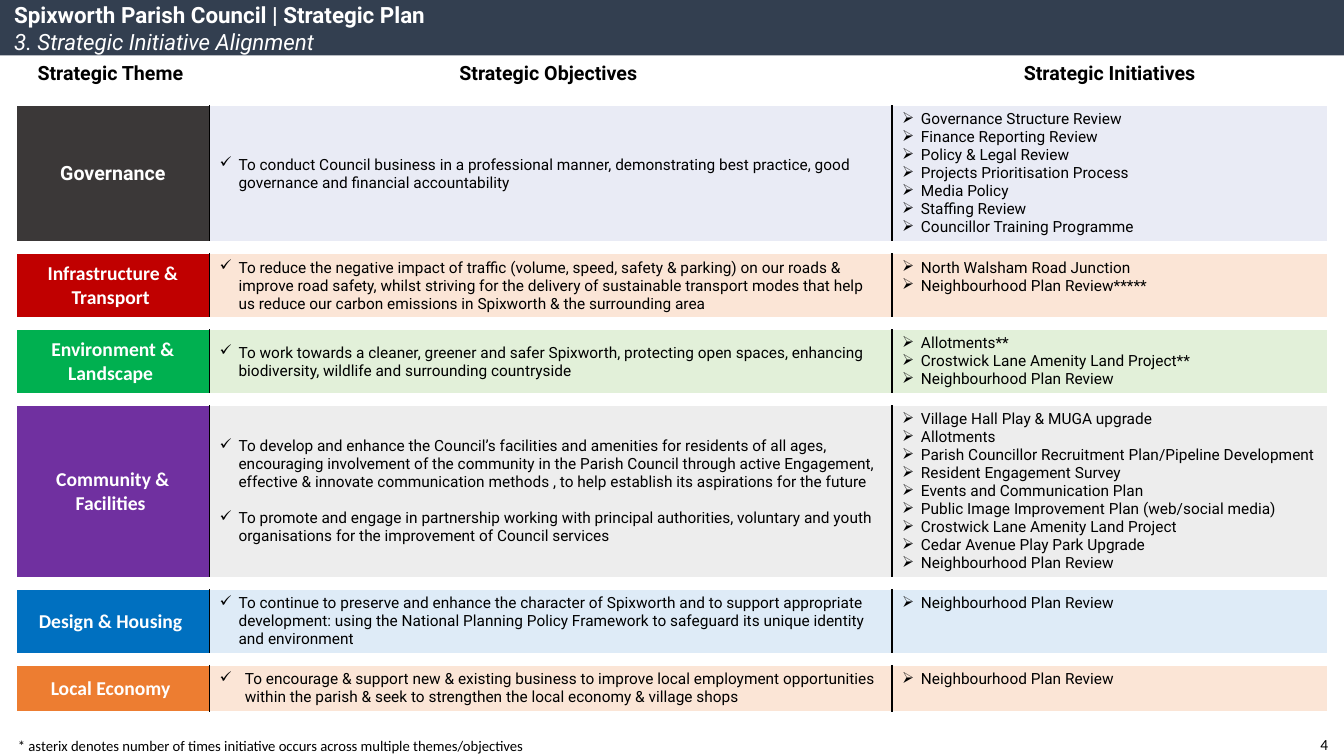
"""Build the strategic initiative alignment slide."""
from dataclasses import dataclass

from lxml import etree
from pptx import Presentation
from pptx.dml.color import RGBColor
from pptx.enum.shapes import MSO_SHAPE
from pptx.enum.text import MSO_ANCHOR, MSO_AUTO_SIZE, PP_ALIGN
from pptx.oxml.ns import qn
from pptx.util import Pt

RECT = MSO_SHAPE.RECTANGLE
TOP, MIDDLE = MSO_ANCHOR.TOP, MSO_ANCHOR.MIDDLE
LEFT, CENTER = PP_ALIGN.LEFT, PP_ALIGN.CENTER
FIT, FIXED = MSO_AUTO_SIZE.SHAPE_TO_FIT_TEXT, MSO_AUTO_SIZE.NONE

WHITE = RGBColor(0xFF, 0xFF, 0xFF)
BLACK = RGBColor(0x00, 0x00, 0x00)
NAVY = RGBColor(0x33, 0x3F, 0x50)
COAL = RGBColor(0x3B, 0x38, 0x38)
RED = RGBColor(0xC0, 0x00, 0x00)
GREEN = RGBColor(0x00, 0xB0, 0x50)
PURPLE = RGBColor(0x70, 0x30, 0xA0)
BLUE = RGBColor(0x00, 0x70, 0xC0)
ORANGE = RGBColor(0xED, 0x7D, 0x31)
MIST = RGBColor(0xE9, 0xEB, 0xF5)
PEACH = RGBColor(0xFB, 0xE5, 0xD6)
MINT = RGBColor(0xE2, 0xF0, 0xD9)
PALE = RGBColor(0xED, 0xED, 0xED)
SKY = RGBColor(0xDE, 0xEB, 0xF7)

HEAD = {"name": "Roboto", "size": Pt(14), "bold": True}
THEME = {"name": "Calibri", "size": Pt(14), "bold": True}
ITEM = {"name": "Roboto", "size": Pt(11), "bold": False}
MAIN = {"name": "Roboto", "size": Pt(16), "bold": True, "italic": False}
SUB = {"name": "Roboto", "size": Pt(16), "bold": False, "italic": True}
NOTE = {"name": "Calibri", "size": Pt(10.5)}
PAGE = {"name": "Calibri", "size": Pt(11)}

HEADS = ("Strategic Theme ", "Strategic Objectives ", "Strategic Initiatives")
COLS = (138.24, 487.44, 311.04)
HEAD_H, GAP_H = 26, 8.5
REVIEW = "Neighbourhood Plan Review"


@dataclass(frozen=True)
class Band:
    """One theme with its goals, tasks and colours."""
    theme: str
    dark: RGBColor
    light: RGBColor
    height: float
    goals: tuple[str, ...]
    tasks: tuple[str, ...]
    form: dict
    indent: float = 13.5


BANDS = (
    Band("Governance", COAL, MIST, 97.3,
         ("To conduct Council business in a professional manner, demonstrating best practice, "
          "good governance and financial accountability",),
         ("Governance Structure Review", "Finance Reporting Review", "Policy & Legal Review",
          "Projects Prioritisation Process", "Media Policy", "Staffing Review",
          "Councillor Training Programme"), HEAD),
    Band("Infrastructure & Transport ", RED, PEACH, 45.8,
         ("To reduce the negative impact of traffic (volume, speed, safety & parking) on our "
          "roads & improve road safety, whilst striving for the delivery of sustainable "
          "transport modes that help us reduce our carbon emissions in Spixworth & the "
          "surrounding area",),
         ("North Walsham Road Junction", REVIEW + "*****"), THEME),
    Band("Environment & Landscape ", GREEN, MINT, 45.8,
         ("To work towards a cleaner, greener and safer Spixworth, protecting open spaces, "
          "enhancing biodiversity, wildlife and surrounding countryside",),
         ("Allotments**", "Crostwick Lane Amenity Land Project**", REVIEW), THEME),
    Band("Community & Facilities ", PURPLE, PALE, 122.8,
         ("To develop and enhance the Council’s facilities and amenities for residents of all "
          "ages, encouraging involvement of the community in the Parish Council through active "
          "Engagement, effective & innovate communication methods , to help establish its "
          "aspirations for the future",
          "To promote and engage in partnership working with principal authorities, voluntary "
          "and youth organisations for the improvement of Council services"),
         ("Village Hall Play & MUGA upgrade", "Allotments",
          "Parish Councillor Recruitment Plan/Pipeline Development",
          "Resident Engagement Survey", "Events and Communication Plan",
          "Public Image Improvement Plan (web/social media)",
          "Crostwick Lane Amenity Land Project", "Cedar Avenue Play Park Upgrade",
          REVIEW), THEME),
    Band("Design & Housing ", BLUE, SKY, 45.8,
         ("To continue to preserve and enhance the character of Spixworth and to support "
          "appropriate development: using the National Planning Policy Framework to safeguard "
          "its unique identity and environment",),
         (REVIEW,), THEME),
    Band("Local Economy ", ORANGE, PEACH, 33,
         ("To encourage & support new & existing business to improve local employment "
          "opportunities within the parish & seek to strengthen the local economy & "
          "village shops",),
         (REVIEW,), THEME, 18),
)


def write(para, text: str, form: dict, color: RGBColor, align=LEFT) -> None:
    """Put one styled run into a paragraph."""
    para.alignment = align
    run = para.add_run()
    run.text = text
    for key, value in form.items():
        setattr(run.font, key, value)
    run.font.color.rgb = color


def paint(cell, fill: RGBColor, left=WHITE, right=WHITE, base=1) -> None:
    """Give a cell its borders and fill."""
    props = cell._tc.get_or_add_tcPr()
    edges = (("L", left, 1), ("R", right, 1), ("T", WHITE, 1), ("B", WHITE, base))
    for side, color, width in edges:
        line = etree.SubElement(props, qn(f"a:ln{side}"), w=str(Pt(width)))
        solid = etree.SubElement(line, qn("a:solidFill"))
        etree.SubElement(solid, qn("a:srgbClr"), val=str(color))
    cell.fill.solid()
    cell.fill.fore_color.rgb = fill


def fill_list(cell, items: tuple[str, ...], mark: str, indent: float, gap: float) -> None:
    """Write a bulleted list into a cell."""
    frame = cell.text_frame
    for index, text in enumerate(items):
        para = frame.add_paragraph() if index else frame.paragraphs[0]
        props = para._p.get_or_add_pPr()
        props.set("marL", str(Pt(indent)))
        props.set("indent", str(-Pt(indent)))
        etree.SubElement(props, qn("a:buChar"), char=mark)
        if index and gap:
            para.space_before = Pt(gap)
        write(para, text, ITEM, BLACK)


def draw_gap(row) -> None:
    """Make a row a thin white gap."""
    row.height = Pt(GAP_H)
    for cell in row.cells:
        paint(cell, WHITE)
        cell.margin_top = cell.margin_bottom = Pt(0)
        para = cell.text_frame.paragraphs[0]
        etree.SubElement(para._p, qn("a:endParaRPr"), sz="100")


def draw_band(row, band: Band) -> None:
    """Fill a row with one theme."""
    row.height = Pt(band.height)
    theme, goals, tasks = row.cells
    paint(theme, band.dark, right=BLACK)
    paint(goals, band.light, BLACK, BLACK)
    paint(tasks, band.light, left=BLACK)
    theme.vertical_anchor = goals.vertical_anchor = MIDDLE
    write(theme.text_frame.paragraphs[0], band.theme, band.form, WHITE, CENTER)
    fill_list(goals, band.goals, "✓", band.indent, 12.9)
    fill_list(tasks, band.tasks, "➢", 13.5, 0)


def draw_grid(slide):
    """Add the table of themes and return its frame."""
    high = HEAD_H + sum(GAP_H + band.height for band in BANDS)
    grid = slide.shapes.add_table(1 + 2 * len(BANDS), len(COLS), Pt(11.52), Pt(41),
                                  Pt(sum(COLS)), Pt(high))
    table = grid.table
    table.first_row = table.horz_banding = False
    for col, width in zip(table.columns, COLS):
        col.width = Pt(width)
    table.rows[0].height = Pt(HEAD_H)
    for cell, text in zip(table.rows[0].cells, HEADS):
        paint(cell, WHITE, base=3)
        write(cell.text_frame.paragraphs[0], text, HEAD, BLACK, CENTER)
    for index, band in enumerate(BANDS):
        draw_gap(table.rows[2 * index + 1])
        draw_band(table.rows[2 * index + 2], band)
    return grid


def draw_note(slide, text: str, form: dict, box: tuple[float, ...]) -> None:
    """Add one line of small text at the foot."""
    frame = slide.shapes.add_textbox(*map(Pt, box)).text_frame
    frame.word_wrap, frame.auto_size = False, FIT
    write(frame.paragraphs[0], text, form, BLACK)


def main() -> None:
    """Build and save the slide."""
    deck = Presentation()
    deck.slide_width, deck.slide_height = Pt(960), Pt(540)
    slide = deck.slides.add_slide(deck.slide_layouts[5])
    title = slide.shapes.title
    title.left, title.top, title.width, title.height = map(Pt, (2.88, -2.88, 960, 46))
    frame = title.text_frame
    frame.vertical_anchor, frame.auto_size = TOP, FIXED
    write(frame.paragraphs[0], "Spixworth Parish Council | Strategic Plan", MAIN, WHITE)
    write(frame.add_paragraph(), "3. Strategic Initiative Alignment", SUB, WHITE)
    grid = draw_grid(slide)
    bar = slide.shapes.add_shape(RECT, Pt(0), Pt(0), Pt(960), Pt(39.6))
    bar.shadow.inherit = False
    bar.fill.solid()
    bar.fill.fore_color.rgb = NAVY
    bar.line.fill.background()
    for part in (grid, bar):
        title.element.addprevious(part.element)
    draw_note(slide, "* asterix denotes number of times initiative occurs across multiple "
              "themes/objectives", NOTE, (5.76, 522.7, 380, 20))
    draw_note(slide, "4", PAGE, (936, 521.3, 20, 21))
    deck.save("out.pptx")


if __name__ == "__main__":
    main()
